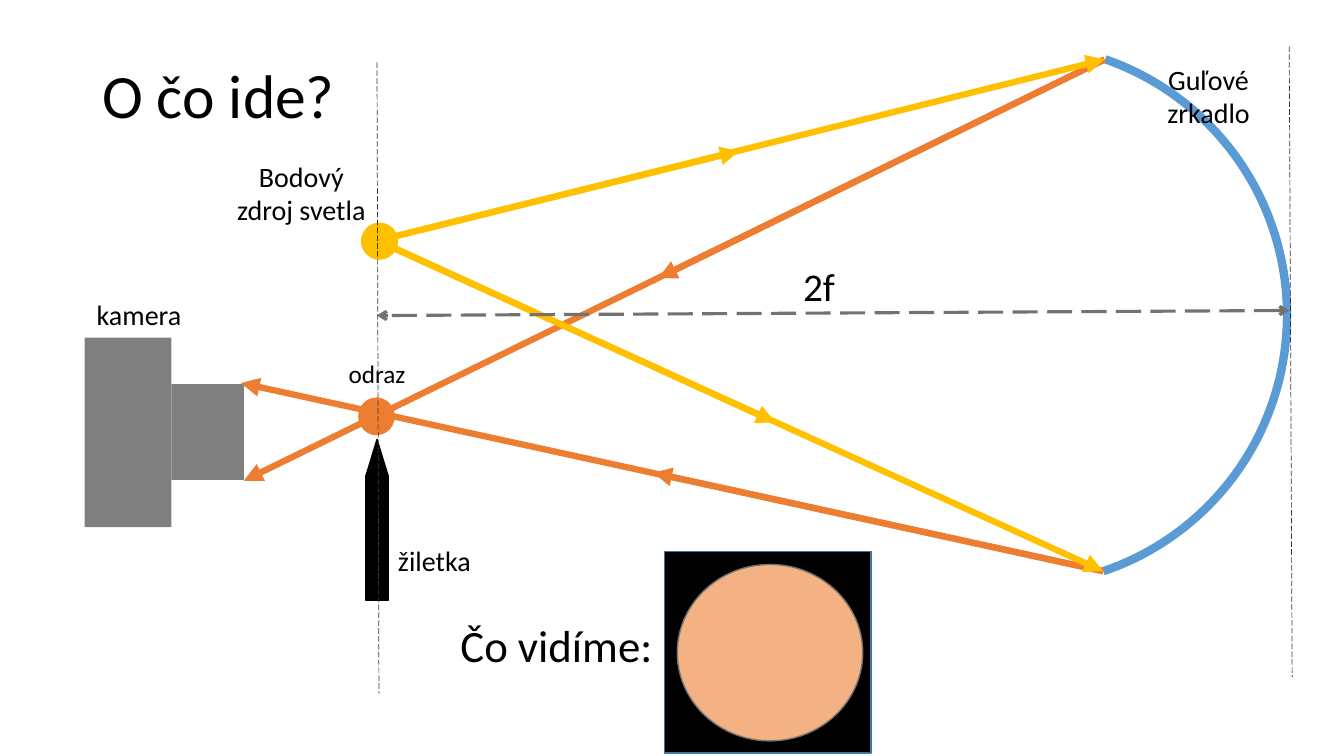
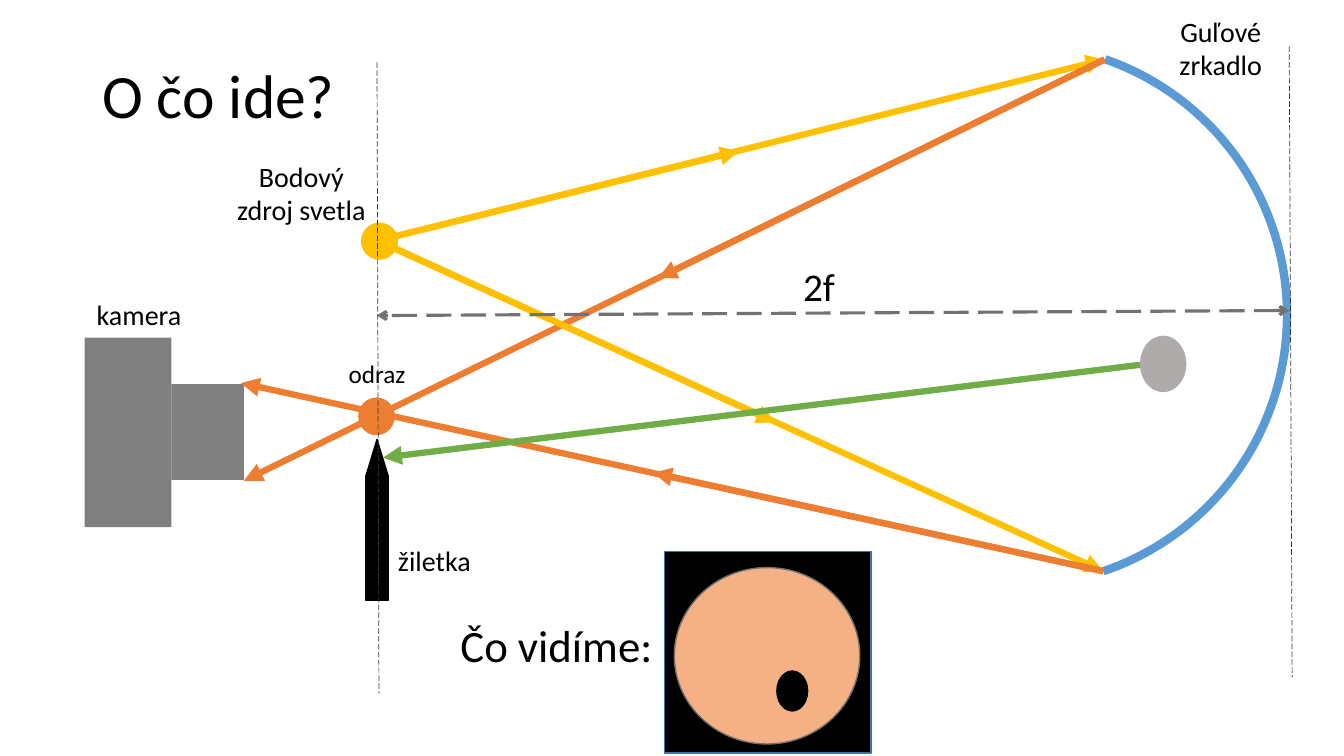
from pptx import Presentation
from pptx.dml.color import RGBColor
from pptx.enum.dml import MSO_LINE
from pptx.enum.shapes import MSO_CONNECTOR, MSO_SHAPE
from pptx.enum.text import MSO_ANCHOR, PP_ALIGN
from pptx.oxml.ns import qn
from pptx.util import Pt
from lxml.etree import SubElement

BLACK, GREY, DARK_GREY = "000000", "808080", "767171"
YELLOW, ORANGE, GREEN, BLUE = "FFC000", "ED7D31", "70AD47", "5B9BD5"

MIRROR_TOP, MIRROR_BOTTOM = (789, 42.5), (788, 408)
SOURCE = (269.5, 172)


def rgb(value):
    return RGBColor.from_string(value)


class Diagram:
    font = "Calibri"
    label_size = 20
    ray_width = 4.5

    def __init__(self, presentation):
        self.slide = presentation.slides.add_slide(presentation.slide_layouts[6])

    def text(self, words, left, top, width, height, size=label_size,
             align=PP_ALIGN.LEFT, anchor=MSO_ANCHOR.TOP, spacing=1.0):
        frame = self.slide.shapes.add_textbox(
            Pt(left), Pt(top), Pt(width), Pt(height)).text_frame
        frame.word_wrap = True
        frame.vertical_anchor = anchor
        paragraph = frame.paragraphs[0]
        paragraph.text = words
        paragraph.alignment = align
        paragraph.line_spacing = spacing
        paragraph.font.name = self.font
        paragraph.font.size = Pt(size)
        paragraph.font.color.rgb = rgb(BLACK)

    def title(self, words):
        self.text(words, 66, 18, 828, 104.4, size=44,
                  anchor=MSO_ANCHOR.MIDDLE, spacing=0.9)

    def shape(self, kind, left, top, width, height, fill=None, line=None, weight=1):
        shape = self.slide.shapes.add_shape(
            kind, Pt(left), Pt(top), Pt(width), Pt(height))
        shape.shadow.inherit = False
        if fill:
            shape.fill.solid()
            shape.fill.fore_color.rgb = rgb(fill)
        else:
            shape.fill.background()
        if line:
            shape.line.color.rgb = rgb(line)
            shape.line.width = Pt(weight)
        else:
            shape.line.fill.background()
        return shape

    def rectangle(self, *box, **style):
        return self.shape(MSO_SHAPE.RECTANGLE, *box, **style)

    def ellipse(self, *box, **style):
        return self.shape(MSO_SHAPE.OVAL, *box, **style)

    def line(self, start, end, color, weight, dashed=False, head=None, tail=None):
        connector = self.slide.shapes.add_connector(
            MSO_CONNECTOR.STRAIGHT, *(Pt(value) for value in (*start, *end)))
        connector.line.color.rgb = rgb(color)
        connector.line.width = Pt(weight)
        if dashed:
            connector.line.dash_style = MSO_LINE.LONG_DASH
        properties = connector._element.spPr
        for tag, arrow in (("a:headEnd", head), ("a:tailEnd", tail)):
            if arrow:
                SubElement(properties.find(qn("a:ln")), qn(tag)).set("type", arrow)
        SubElement(properties, qn("a:effectLst"))

    def rays(self, color, *routes):
        for start, end in routes:
            self.line(start, end, color, self.ray_width, tail="triangle")

    def mirror(self):
        arc = self.shape(MSO_SHAPE.ARC, 532.8, 31.7, 386.6, 386.6,
                         line=BLUE, weight=6)
        arc.adjustments[0] = 173.49
        arc.adjustments[1] = 42.77

    def apparatus(self, mirror_label):
        self.title("O čo ide?")
        self.rectangle(60.5, 241.2, 61.9, 135.4, fill=GREY)
        self.rectangle(122.4, 274.3, 51.8, 68.4, fill=GREY)
        self.text("kamera", 62, 208.8, 111, 31.7)
        self.ellipse(257.8, 159, 26.6, 26.6, fill=YELLOW)
        self.text("Bodový zdroj svetla", 159.8, 110.2, 111, 55.4,
                  align=PP_ALIGN.CENTER)
        self.mirror()
        self.text("Guľové zrkadlo", *mirror_label, 111, 55.4,
                  align=PP_ALIGN.CENTER)
        self.text("odraz", 242, 252.7, 57.6, 29.5, size=18)
        self.ellipse(256.3, 284.4, 25.2, 26, fill=ORANGE, line=ORANGE)

    def incoming_rays(self):
        self.rays(YELLOW, (SOURCE, MIRROR_TOP), (SOURCE, MIRROR_BOTTOM))

    def incoming_marks(self):
        self.rays(YELLOW, ((277.2, 170), (527.8, 108)),
                  ((278.6, 175.7), (553.7, 301.7)))

    def reflected_rays(self):
        self.rays(ORANGE, (MIRROR_TOP, (174.2, 343.4)),
                  (MIRROR_BOTTOM, (172, 273.6)),
                  (MIRROR_BOTTOM, (466.6, 337.7)),
                  (MIRROR_TOP, (470.2, 198.7)))

    def blade_and_distance(self):
        self.rectangle(261.4, 339.8, 15.8, 89.3, fill=BLACK, line=BLACK)
        self.shape(MSO_SHAPE.ISOSCELES_TRIANGLE, 261.4, 313.9, 15.8, 25.9,
                   fill=BLACK, line=BLACK)
        self.text("žiletka", 277.2, 384.5, 111, 31.7)
        for start, end in (((269.3, 44.6), (270.7, 495.4)),
                           ((920.9, 33.1), (923, 483.8))):
            self.line(start, end, "3B3838", 0.5, dashed=True)
        self.line((920.9, 221.8), (269.3, 225.4), DARK_GREY, 2.25,
                  dashed=True, head="arrow", tail="arrow")
        self.text("2f", 566.6, 183.6, 75.6, 41, size=28)

    def view(self, disc_left, disc_top):
        self.text("Čo vidíme:", 297.4, 437.8, 200.2, 46, size=32,
                  align=PP_ALIGN.CENTER)
        self.rectangle(474.5, 393.8, 147.6, 144, fill=BLACK, line="43739E")
        self.ellipse(disc_left, disc_top, 132.5, 126, fill="F4B183", line=DARK_GREY)

    def obstacle(self):
        self.ellipse(814.3, 239.8, 33.1, 40.3, fill="AFABAB")
        self.rays(GREEN, ((814.3, 260.6), (273.6, 326.9)))


def main():
    presentation = Presentation()
    presentation.slide_width = Pt(960)
    presentation.slide_height = Pt(540)

    clear = Diagram(presentation)
    clear.apparatus(mirror_label=(807.8, 41))
    clear.reflected_rays()
    clear.incoming_rays()
    clear.incoming_marks()
    clear.blade_and_distance()
    clear.view(483.8, 403.2)

    disturbed = Diagram(presentation)
    disturbed.apparatus(mirror_label=(816.5, 6.5))
    disturbed.incoming_rays()
    disturbed.reflected_rays()
    disturbed.incoming_marks()
    disturbed.blade_and_distance()
    disturbed.obstacle()
    disturbed.view(481.7, 405.4)
    disturbed.ellipse(554.4, 478.8, 23, 29.5, fill=BLACK)

    presentation.save("out.pptx")


if __name__ == "__main__":
    main()
